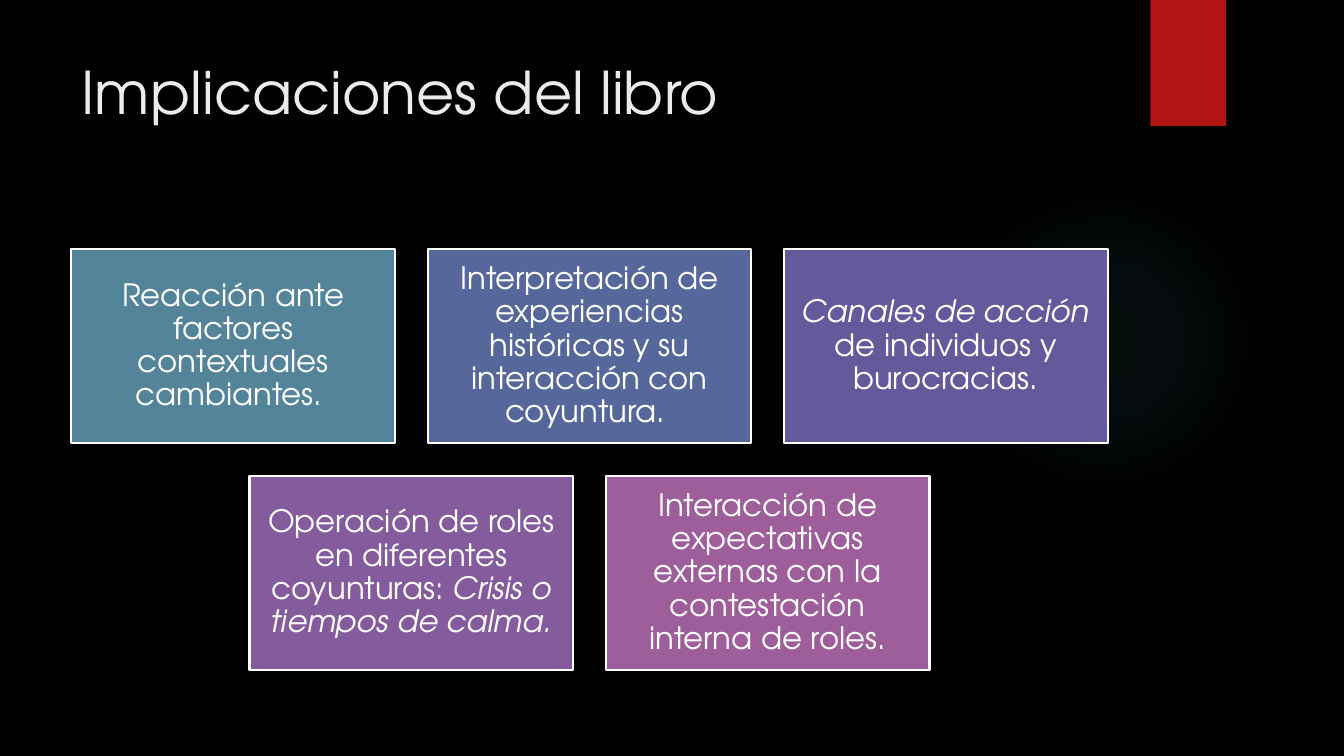
from dataclasses import dataclass

from lxml import etree
from pptx import Presentation
from pptx.dml.color import RGBColor
from pptx.enum.shapes import MSO_SHAPE
from pptx.enum.text import MSO_ANCHOR, PP_ALIGN
from pptx.oxml import parse_xml
from pptx.oxml.ns import nsdecls, qn
from pptx.shapes.autoshape import Shape
from pptx.slide import Slide
from pptx.util import Pt

RECTANGLE = MSO_SHAPE.RECTANGLE
OVAL = MSO_SHAPE.OVAL
MIDDLE = MSO_ANCHOR.MIDDLE
TOP = MSO_ANCHOR.TOP
CENTER = PP_ALIGN.CENTER

FONT = "TeX Gyre Adventor"
WHITE = "FFFFFF"
GLOW_COLOR = "50B9C1"
GLOW_STOPS = ((0, 7), (36, 6), (69, 0))

CARD_WIDTH, CARD_HEIGHT = 231.3, 138.8
GAP = 23.13
FIRST_LEFT, FIRST_TOP = 51.0, 177.8
CARDS_PER_ROW = 3


@dataclass(frozen=True)
class Phrase:
    text: str
    italic: bool = False


@dataclass(frozen=True)
class Card:
    fill: str
    phrases: tuple[Phrase, ...]


CARDS = (
    Card("54849A", (Phrase("Reacción ante factores contextuales cambiantes. "),)),
    Card("56689B", (Phrase("Interpretación de experiencias históricas y su "
                           "interacción con coyuntura. "),)),
    Card("65599C", (Phrase("Canales de acción ", True),
                    Phrase("de individuos y burocracias."))),
    Card("845B9D", (Phrase("Operación de roles en diferentes coyunturas: "),
                    Phrase("Crisis o tiempos de calma.", True))),
    Card("9E5E9B", (Phrase("Interacción de expectativas externas con la "
                           "contestación interna de roles."),)),
)


def color(value: str) -> RGBColor:
    return RGBColor.from_string(value)


def add_plain_shape(slide: Slide, kind: MSO_SHAPE, left: float, top: float,
                    width: float, height: float, fill: str) -> Shape:
    shape = slide.shapes.add_shape(kind, Pt(left), Pt(top), Pt(width), Pt(height))
    shape.shadow.inherit = False
    shape.fill.solid()
    shape.fill.fore_color.rgb = color(fill)
    shape.line.fill.background()
    return shape


def add_glow(slide: Slide) -> None:
    glow = add_plain_shape(slide, OVAL, 677.5, 131.8, 221.8, 221.8, GLOW_COLOR)
    gradient = parse_xml(
        f'<a:gradFill {nsdecls("a")} rotWithShape="1"><a:gsLst/>'
        '<a:path path="circle"><a:fillToRect l="50000" t="50000" r="50000" b="50000"/>'
        '</a:path></a:gradFill>')
    stops = gradient.find(qn("a:gsLst"))
    for position, opacity in GLOW_STOPS:
        stop = etree.SubElement(stops, qn("a:gs"), pos=str(position * 1000))
        tint = etree.SubElement(stop, qn("a:srgbClr"), val=GLOW_COLOR)
        etree.SubElement(tint, qn("a:alpha"), val=str(opacity * 1000))
    properties = glow.element.spPr
    properties.replace(properties.find(qn("a:solidFill")), gradient)


def add_title(slide: Slide, text: str) -> None:
    title = slide.shapes.add_textbox(Pt(51), Pt(36), Pt(741), Pt(110)).text_frame
    title.word_wrap = True
    title.vertical_anchor = TOP
    heading = title.paragraphs[0]
    heading.text = text
    heading.font.name = FONT
    heading.font.size = Pt(42)
    heading.font.color.rgb = color("EBEBEB")


def add_card(slide: Slide, card: Card, left: float, top: float) -> None:
    box = add_plain_shape(slide, RECTANGLE, left, top, CARD_WIDTH, CARD_HEIGHT, card.fill)
    box.line.color.rgb = color(WHITE)
    box.line.width = Pt(1.5)
    frame = box.text_frame
    frame.word_wrap = True
    frame.vertical_anchor = MIDDLE
    frame.margin_left = frame.margin_right = Pt(6.6)
    frame.margin_top = frame.margin_bottom = Pt(6.6)
    statement = frame.paragraphs[0]
    statement.alignment = CENTER
    statement.line_spacing = 0.9
    statement.space_after = Pt(7.7)
    statement.font.name = FONT
    statement.font.size = Pt(22)
    statement.font.color.rgb = color(WHITE)
    for phrase in card.phrases:
        run = statement.add_run()
        run.text = phrase.text
        run.font.italic = phrase.italic


def add_cards(slide: Slide) -> None:
    pitch = CARD_WIDTH + GAP
    for start in range(0, len(CARDS), CARDS_PER_ROW):
        row = CARDS[start:start + CARDS_PER_ROW]
        left = FIRST_LEFT + (CARDS_PER_ROW - len(row)) * pitch / 2
        top = FIRST_TOP + start // CARDS_PER_ROW * (CARD_HEIGHT + GAP)
        for column, card in enumerate(row):
            add_card(slide, card, left + column * pitch, top)


def main() -> None:
    deck = Presentation()
    deck.slide_width, deck.slide_height = Pt(960), Pt(540)
    slide = deck.slides.add_slide(deck.slide_layouts[6])
    slide.background.fill.solid()
    slide.background.fill.fore_color.rgb = color("000000")
    add_glow(slide)
    add_plain_shape(slide, RECTANGLE, 821.8, 0, 54, 90, "B01513")
    add_title(slide, "Implicaciones del libro")
    add_cards(slide)
    deck.save("out.pptx")


if __name__ == "__main__":
    main()
